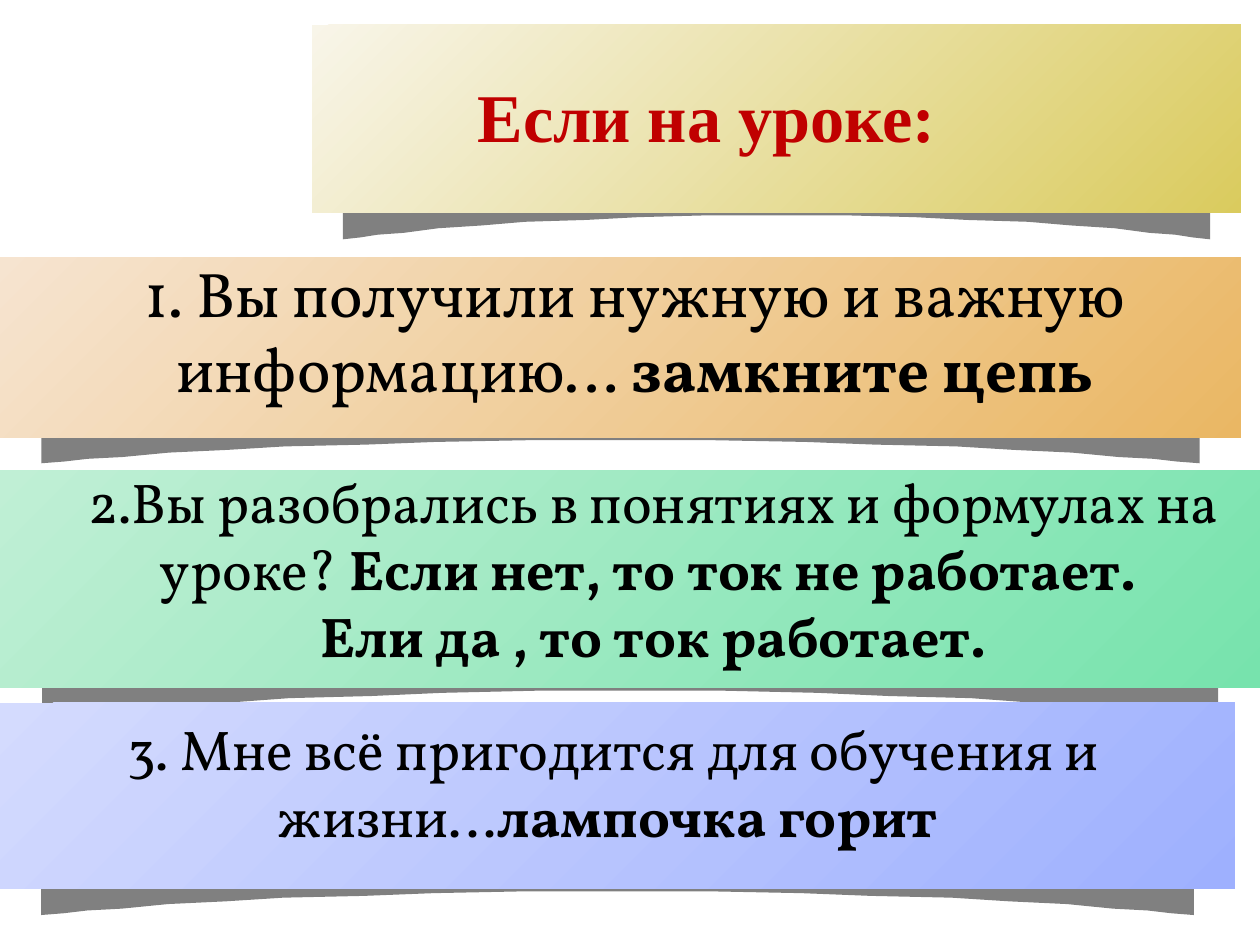
import pptx
import pptx.util
import pptx.dml.color
import pptx.enum.shapes
import pptx.enum.text

EMU_PER_PX = 914400 / 126
BODY_FONT = "Vollkorn"
TITLE_FONT = "Times New Roman"

# Left half of the shadow's curved lower edge, as fractions of its size
SHADOW_CURVE = [
    (0, 1), (0.02, 0.98), (0.04, 0.95), (0.07, 0.93), (0.11, 0.88), (0.16, 0.85),
    (0.21, 0.81), (0.28, 0.79), (0.34, 0.76), (0.42, 0.74), (0.5, 0.74),
]
SHADOW_TOP = [(0, 0.25), (0.5, 0), (1, 0.25)]

# Panel box, gradient colours, text box, text size, paragraphs of (text, bold)
STATEMENTS = [
    ((0, 257, 1241, 181), ("F6E4D0", "EAB764"), (10, 248, 1250, 165), 36, [
        [("1. Вы получили нужную и важную информацию… ", False),
         ("замкните цепь", True)],
    ]),
    ((0, 470, 1260, 218), ("C0EFD5", "77E3AD"), (0, 461, 1308, 217), 32, [
        [("2.Вы разобрались в понятиях и формулах на уроке? ", False),
         ("Если нет, то ток не работает. ", True)],
        [("Ели да , то ток работает.", True)],
    ]),
    ((0, 703, 1235, 186), ("D4DBFE", "9EB0FE"), (0, 708, 1227, 149), 32, [
        [("3. Мне всё пригодится для обучения и жизни…", False),
         ("лампочка горит ", True)],
    ]),
]


def px(value):
    return pptx.util.Emu(round(value * EMU_PER_PX))


def colour(hex_code):
    return pptx.dml.color.RGBColor.from_string(hex_code)


def add_span(para, text, font, size, hex_code, bold):
    span = para.add_run()
    span.text = text
    span.font.name = font
    span.font.size = pptx.util.Pt(size)
    span.font.bold = bold
    span.font.color.rgb = colour(hex_code)


def add_shadow(page, panel_box):
    """Curled paper shadow, sized in proportion to its panel."""
    left, top, width, height = panel_box
    inset = width / 30
    shadow_width = width - 2 * inset
    shadow_height = 0.49 * height
    shadow_top = top + 1.14 * height - shadow_height
    right_half = [(1 - x, y) for x, y in SHADOW_CURVE]
    outline = SHADOW_TOP + right_half + SHADOW_CURVE[-2::-1]
    points = [(px(left + inset + x * shadow_width), px(shadow_top + y * shadow_height))
              for x, y in outline]
    builder = page.shapes.build_freeform(*points[0])
    builder.add_line_segments(points[1:], close=True)
    shadow = builder.convert_to_shape()
    shadow.shadow.inherit = False
    shadow.fill.solid()
    shadow.fill.fore_color.rgb = colour("808080")
    shadow.line.fill.background()


def add_panel(page, panel_box, gradient):
    add_shadow(page, panel_box)
    panel = page.shapes.add_shape(
        pptx.enum.shapes.MSO_SHAPE.RECTANGLE, *map(px, panel_box))
    panel.shadow.inherit = False
    panel.line.fill.background()
    panel.fill.gradient()
    panel.fill.gradient_angle = 315
    for stop, position, hex_code in zip(panel.fill.gradient_stops, (0, 1), gradient):
        stop.position = position
        stop.color.rgb = colour(hex_code)


def add_statement(page, text_box, size, paragraphs):
    box = page.shapes.add_textbox(*map(px, text_box))
    frame = box.text_frame
    frame.word_wrap = True
    for index, spans in enumerate(paragraphs):
        para = frame.add_paragraph() if index else frame.paragraphs[0]
        para.alignment = pptx.enum.text.PP_ALIGN.CENTER
        for text, bold in spans:
            add_span(para, text, BODY_FONT, size, "000000", bold)


def place_title(page, text):
    title = page.shapes.title
    title.left, title.top, title.width, title.height = map(px, (180, 28, 1053, 184))
    frame = title.text_frame
    frame.word_wrap = True
    frame.auto_size = pptx.enum.text.MSO_AUTO_SIZE.NONE
    frame.vertical_anchor = pptx.enum.text.MSO_ANCHOR.MIDDLE
    para = frame.paragraphs[0]
    para.alignment = pptx.enum.text.PP_ALIGN.CENTER
    para.line_spacing = 0.9
    add_span(para, text, TITLE_FONT, 39, "C00000", True)
    # Bring the title in front of its panel
    title.element.getparent().append(title.element)


def main():
    deck = pptx.Presentation()
    deck.slide_width, deck.slide_height = px(1260), px(945)
    page = deck.slides.add_slide(deck.slide_layouts[5])

    # Three statements
    for panel_box, gradient, text_box, size, paragraphs in STATEMENTS:
        add_panel(page, panel_box, gradient)
        add_statement(page, text_box, size, paragraphs)

    # Heading
    add_panel(page, (312, 25, 929, 188), ("F8F5E9", "DACB5E"))
    place_title(page, "Если на уроке:")

    deck.save("out.pptx")


if __name__ == "__main__":
    main()
